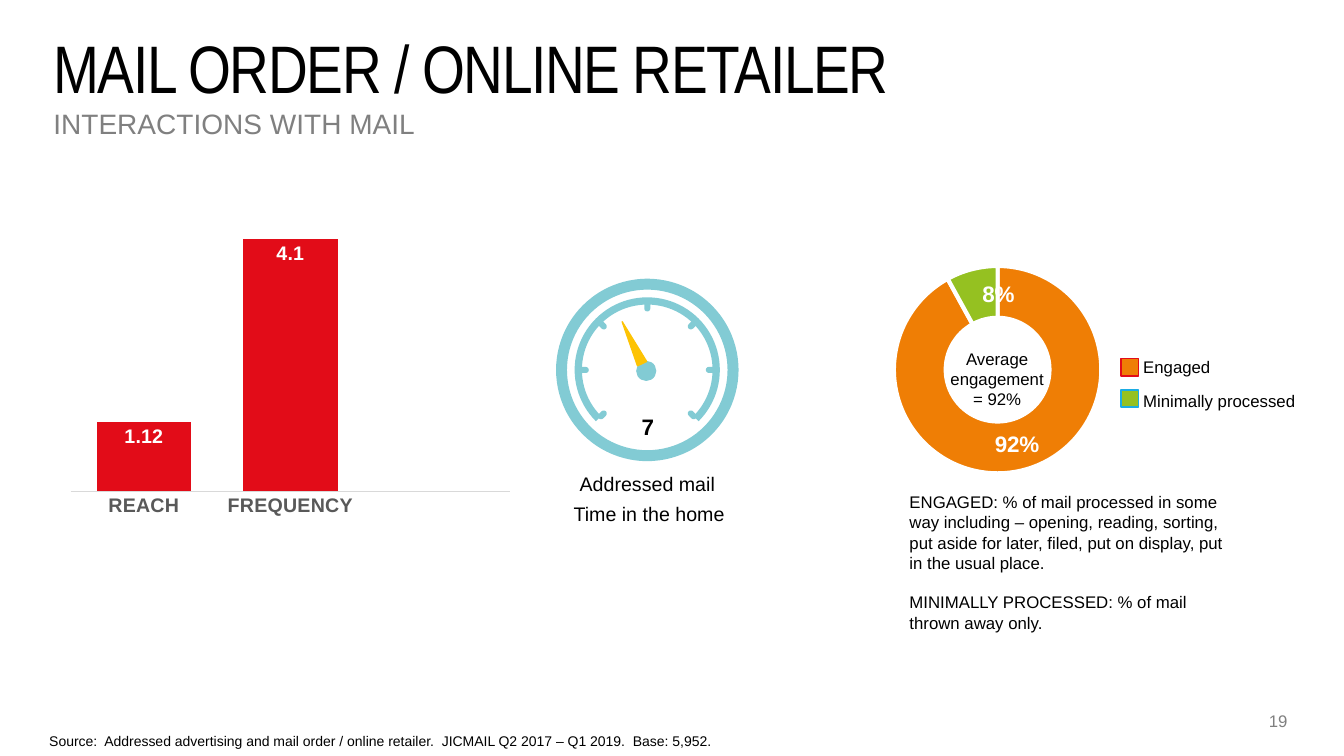
from math import cos, radians, sin

from lxml import etree
from pptx import Presentation
from pptx.chart.data import CategoryChartData
from pptx.dml.color import RGBColor
from pptx.enum.chart import XL_CHART_TYPE as ChartType
from pptx.enum.chart import XL_LABEL_POSITION as LabelPosition
from pptx.enum.chart import XL_TICK_MARK as TickMark
from pptx.enum.shapes import MSO_SHAPE as Preset
from pptx.enum.text import MSO_ANCHOR as Anchor
from pptx.enum.text import PP_ALIGN as Align
from pptx.oxml.ns import qn
from pptx.util import Inches, Pt

COLOURS = {
    "black": "000000", "white": "FFFFFF", "grey": "808080", "axis_text": "595959",
    "axis_line": "D9D9D9", "red": "E20C18", "orange": "EF7E05", "green": "95C121",
    "blue": "1BACE4", "gauge": "82CBD4", "needle": "FDC304",
}
GAUGE_X, GAUGE_Y = 6.42, 3.67


def rgb(name):
    return RGBColor.from_string(COLOURS[name])


def style_font(font, size, colour="black", bold=False, name="Arial"):
    for attribute, value in {"size": Pt(size), "bold": bold, "name": name}.items():
        setattr(font, attribute, value)
    font.color.rgb = rgb(colour)


def write_text(shape, paragraphs, size, colour="black", bold=False, name="Arial",
               align=Align.LEFT, wrap=True, inset=None, gap=0, spacing=None):
    frame = shape.text_frame
    frame.word_wrap = wrap
    frame.vertical_anchor = Anchor.TOP
    if inset is not None:
        for side in ("left", "top", "right", "bottom"):
            setattr(frame, f"margin_{side}", Inches(inset))
    for index, words in enumerate(paragraphs):
        paragraph = frame.add_paragraph() if index else frame.paragraphs[0]
        paragraph.alignment = align
        if index:
            paragraph.space_before = Pt(gap)
        if spacing:
            paragraph.line_spacing = spacing
        run = paragraph.add_run()
        run.text = words
        style_font(run.font, size, colour, bold, name)


def add_text(slide, box, paragraphs, size, **formats):
    shape = slide.shapes.add_textbox(*map(Inches, box))
    write_text(shape, paragraphs, size, **formats)


def add_preset(slide, preset, box, fill, line=None, rotation=0, adjustments=()):
    shape = slide.shapes.add_shape(preset, *map(Inches, box))
    shape.shadow.inherit = False
    shape.rotation = rotation
    shape.fill.solid()
    shape.fill.fore_color.rgb = rgb(fill)
    if line:
        shape.line.color.rgb = rgb(line)
        shape.line.width = Pt(1)
    else:
        shape.line.fill.background()
    for index, value in enumerate(adjustments):
        shape.adjustments[index] = value


def add_title(slide):
    title = slide.shapes.title
    box = {"left": 0.53, "top": 0.45, "width": 12.2, "height": 0.52}
    for attribute, value in box.items():
        setattr(title, attribute, Inches(value))
    write_text(title, ["MAIL ORDER / ONLINE RETAILER"], 48, name="Arial Narrow",
               inset=0, spacing=Pt(44))
    title.text_frame.paragraphs[0].runs[0].font._element.set("spc", "-100")


def make_layout(**places):
    layout = etree.Element(qn("c:layout"))
    manual = etree.SubElement(layout, qn("c:manualLayout"))
    for tag, value in places.items():
        etree.SubElement(manual, qn(f"c:{tag}")).set("val", str(value))
    return layout


def place_plot(chart, x, y, w, h):
    area = chart._chartSpace.find(".//" + qn("c:plotArea"))
    for old in area.findall(qn("c:layout")):
        area.remove(old)
    area.insert(0, make_layout(layoutTarget="inner", xMode="edge", yMode="edge",
                               x=x, y=y, w=w, h=h))


def add_chart(slide, kind, box, categories, values, number_format, label_size, plot_box):
    data = CategoryChartData(number_format=number_format)
    data.categories = categories
    data.add_series("Series 1", values)
    chart = slide.shapes.add_chart(kind, *map(Inches, box), data).chart
    chart.has_legend = False
    chart.has_title = False
    style_font(chart.font, 10)
    place_plot(chart, *plot_box)
    plot = chart.plots[0]
    plot.has_data_labels = True
    labels = plot.data_labels
    labels.show_value = True
    labels.show_percentage = False
    labels.number_format = number_format
    labels.number_format_is_linked = False
    style_font(labels.font, label_size, "white", True)
    return chart, plot


def add_contact_chart(slide):
    chart, plot = add_chart(
        slide, ChartType.COLUMN_CLUSTERED, (0.61, 2.06, 4.54, 3.16),
        ["REACH", "FREQUENCY", ""], [1.12, 4.1, None], "General", 14,
        (0.02, 0.02, 0.96, 0.87))
    plot.gap_width = 55
    plot.vary_by_categories = False
    plot.data_labels.position = LabelPosition.INSIDE_END
    fill = plot.series[0].format.fill
    fill.solid()
    fill.fore_color.rgb = rgb("red")
    scale = chart.value_axis
    scale.minimum_scale, scale.maximum_scale = 0, 4.5
    scale.has_major_gridlines = False
    scale.visible = False
    axis = chart.category_axis
    axis.major_tick_mark = TickMark.NONE
    axis.format.line.color.rgb = rgb("axis_line")
    axis.format.line.width = Pt(0.75)
    style_font(axis.tick_labels.font, 14, "axis_text", True)


def add_engagement_chart(slide):
    chart, plot = add_chart(
        slide, ChartType.DOUGHNUT, (8.23, 2.49, 3.33, 2.48),
        ["1", "2"], [0.92, 0.08], "0%", 16, (0.19, 0.06, 0.62, 0.83))
    plot.vary_by_categories = True
    chart._chartSpace.find(".//" + qn("c:holeSize")).set("val", "50")
    points = plot.series[0].points
    for index, colour in enumerate(("orange", "green")):
        look = points[index].format
        look.fill.solid()
        look.fill.fore_color.rgb = rgb(colour)
        look.line.color.rgb = rgb("white")
        look.line.width = Pt(3)
        style_font(points[index].data_label.font, 16, "white", True)
    minimal = chart._chartSpace.findall(".//" + qn("c:dLbl"))[1]
    minimal.insert(1, make_layout(x=0.06, y=0))


def add_centred(slide, preset, x, y, width, height, fill="gauge", **looks):
    add_preset(slide, preset, (x - width / 2, y - height / 2, width, height), fill, **looks)


def add_gauge(slide):
    add_centred(slide, Preset.DONUT, GAUGE_X, GAUGE_Y, 1.81, 1.81, adjustments=[0.06])
    add_centred(slide, Preset.BLOCK_ARC, GAUGE_X, GAUGE_Y, 1.44, 1.44,
                adjustments=[81, 27, 0.05])
    for angle in range(-135, 136, 45):
        x = GAUGE_X + 0.63 * sin(radians(angle))
        y = GAUGE_Y - 0.63 * cos(radians(angle))
        add_centred(slide, Preset.ROUNDED_RECTANGLE, x, y, 0.06, 0.1,
                    rotation=angle, adjustments=[0.5])
    add_centred(slide, Preset.OVAL, 6.41, 3.68, 0.2, 0.2)
    add_preset(slide, Preset.ISOSCELES_TRIANGLE, (6.22, 3.17, 0.1, 0.46),
               "needle", "needle", 334.6)
    add_text(slide, (6.26, 4.05, 0.33, 0.37), ["7"], 16, bold=True,
             align=Align.CENTER, wrap=False)
    add_text(slide, (5.65, 4.63, 1.55, 0.34), ["Addressed mail"], 14, wrap=False)
    add_text(slide, (5.59, 4.93, 1.71, 0.34), ["Time in the home"], 14, wrap=False)


def add_legend(slide):
    entries = [("Engaged", 0.87, "orange", "red"),
               ("Minimally processed", 1.72, "green", "blue")]
    for row, (label, width, fill, line) in enumerate(entries):
        add_preset(slide, Preset.RECTANGLE, (11.12, 3.56 + row * 0.31, 0.17, 0.17), fill, line)
        add_text(slide, (11.24, 3.49 + row * 0.34, width, 0.3), [label], 12, wrap=False)


def main():
    deck = Presentation()
    deck.slide_width, deck.slide_height = Inches(13.33), Inches(7.5)
    slide = deck.slides.add_slide(deck.slide_layouts[5])
    add_title(slide)
    add_text(slide, (12.3, 7.05, 0.47, 0.2), ["19"], 12, colour="grey",
             align=Align.RIGHT, inset=0)
    add_text(slide, (0.53, 1.09, 12.23, 0.29), ["INTERACTIONS WITH MAIL"], 20,
             colour="grey", inset=0, spacing=0.9)
    add_contact_chart(slide)
    add_gauge(slide)
    add_engagement_chart(slide)
    add_legend(slide)
    add_text(slide, (9.02, 4.88, 3.28, 0.81), [
        "ENGAGED: % of mail processed in some way including – opening, reading, sorting, "
        "put aside for later, filed, put on display, put in the usual place.",
        "MINIMALLY PROCESSED: % of mail thrown away only."], 12, inset=0, gap=14)
    add_text(slide, (9.28, 3.41, 1.22, 0.71), ["Average engagement = 92%"], 12,
             align=Align.CENTER)
    add_text(slide, (0.39, 7.22, 6.83, 0.27), [
        "Source:  Addressed advertising and mail order / online retailer.  "
        "JICMAIL Q2 2017 – Q1 2019.  Base: 5,952."], 10, wrap=False)
    deck.save("out.pptx")


if __name__ == "__main__":
    main()
